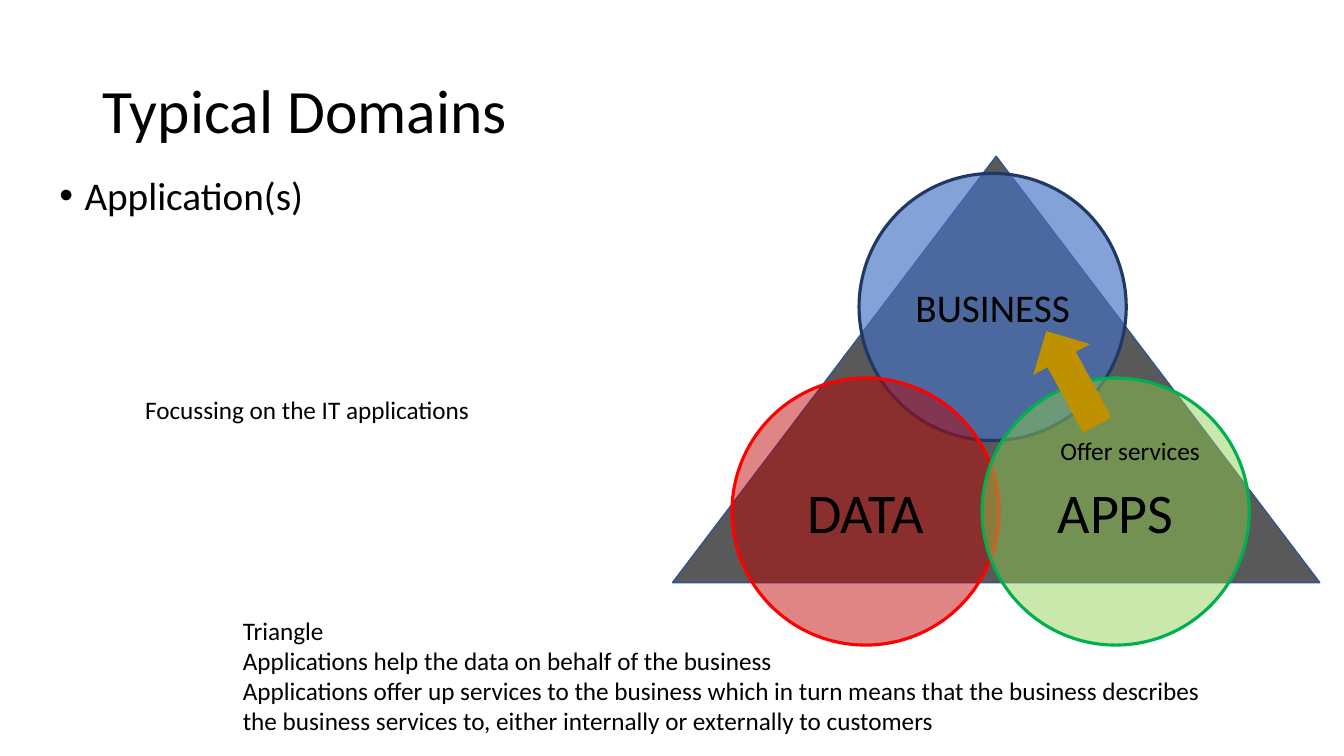
from lxml import etree
from pptx import Presentation
from pptx.dml.color import RGBColor
from pptx.enum.shapes import MSO_SHAPE
from pptx.enum.text import MSO_ANCHOR, PP_ALIGN
from pptx.oxml.ns import qn
from pptx.util import Inches, Pt

TRIANGLE, ELLIPSE, ARROW = MSO_SHAPE.ISOSCELES_TRIANGLE, MSO_SHAPE.OVAL, MSO_SHAPE.RIGHT_ARROW
TOP, MIDDLE = MSO_ANCHOR.TOP, MSO_ANCHOR.MIDDLE
LEFT, CENTER = PP_ALIGN.LEFT, PP_ALIGN.CENTER

BLACK = RGBColor(0x00, 0x00, 0x00)
GREY = RGBColor(0x59, 0x59, 0x59)
EDGE_BLUE = RGBColor(0x32, 0x54, 0x91)
BLUE = RGBColor(0x44, 0x72, 0xC4)
NAVY = RGBColor(0x20, 0x38, 0x64)
DARK_RED = RGBColor(0xC0, 0x00, 0x00)
RED = RGBColor(0xFF, 0x00, 0x00)
LIME = RGBColor(0x92, 0xD0, 0x50)
GREEN = RGBColor(0x00, 0xB0, 0x50)
GOLD = RGBColor(0xBF, 0x90, 0x00)

FONT = "Calibri"
DIAMETER = 2.65
DOMAINS = [
    ("BUSINESS", 28, 1.85, 0.17, BLUE, NAVY, 66),
    ("DATA", 40, 0.59, 2.2, DARK_RED, RED, 48),
    ("APPS", 40, 3.07, 2.2, LIME, GREEN, 48),
]
EXPLANATION = [
    "Triangle",
    "Applications help the data on behalf of the business",
    "Applications offer up services to the business which in turn means that "
    "the business describes the business services to, either internally or "
    "externally to customers",
]


def write(frame, lines, size, align=LEFT, anchor=TOP, wrap=True, spacing=1.0):
    """Fill a text frame with one paragraph per line."""
    frame.word_wrap = wrap
    frame.vertical_anchor = anchor
    for index, line in enumerate(lines):
        paragraph = frame.paragraphs[0] if index == 0 else frame.add_paragraph()
        paragraph.alignment = align
        paragraph.line_spacing = spacing
        run = paragraph.add_run()
        run.text = line
        for name, value in {"name": FONT, "size": Pt(size)}.items():
            setattr(run.font, name, value)
        run.font.color.rgb = BLACK


def add_text(slide, box, lines, size, **style):
    """Place a text box and return its text frame."""
    frame = slide.shapes.add_textbox(*map(Inches, box)).text_frame
    write(frame, lines, size, **style)
    return frame


def add_figure(slide, preset, box, fill, edge=None, weight=1, opacity=100):
    """Place a flat preset shape with an optional outline."""
    figure = slide.shapes.add_shape(preset, *map(Inches, box))
    figure.shadow.inherit = False
    figure.fill.solid()
    figure.fill.fore_color.rgb = fill
    if opacity < 100:
        color = figure.fill._xPr.find(qn("a:solidFill"))[0]
        etree.SubElement(color, qn("a:alpha")).set("val", str(opacity * 1000))
    if edge is None:
        figure.line.fill.background()
    else:
        figure.line.color.rgb = edge
        figure.line.width = Pt(weight)
    return figure


def add_heading(slide, left, top):
    """Place the title and the bulleted domain under it."""
    add_text(slide, (left + 0.43, top, 11.5, 1.45), ["Typical Domains"], 44,
             anchor=MIDDLE, spacing=0.9)
    domain = add_text(slide, (left, top + 1.3, 4.84, 0.72), ["Application(s)"], 28,
                      spacing=0.9)
    domain.paragraphs[0].space_before = Pt(10)
    properties = domain.paragraphs[0]._p.get_or_add_pPr()
    indent = Inches(0.25)
    properties.set("marL", str(indent))
    properties.set("indent", str(-indent))
    etree.SubElement(properties, qn("a:buFont")).set("typeface", "Arial")
    etree.SubElement(properties, qn("a:buChar")).set("char", "•")


def add_domain_triangle(slide, left, top):
    """Place the triangle, its three domain circles and the service arrow."""
    add_figure(slide, TRIANGLE, (left, top, 6.42, 4.23), GREY, EDGE_BLUE)
    for label, size, dx, dy, fill, edge, opacity in DOMAINS:
        circle = add_figure(slide, ELLIPSE, (left + dx, top + dy, DIAMETER, DIAMETER),
                            fill, edge, 2.25, opacity)
        write(circle.text_frame, [label], size, align=CENTER, anchor=MIDDLE)
    add_text(slide, (left + 3.75, top + 2.72, 1.6, 0.4), ["Offer services"], 18, wrap=False)
    service_arrow = add_figure(slide, ARROW, (left + 3.43, top + 1.88, 1.06, 0.64), GOLD)
    service_arrow.rotation = 241.5


def add_notes_on_domain(slide):
    """Place the focus line and the explanation of the triangle."""
    add_text(slide, (1.34, 3.86, 3.45, 0.4), ["Focussing on the IT applications"], 18,
             wrap=False)
    add_text(slide, (2.31, 6.05, 9.71, 1.92), EXPLANATION, 18)


def main():
    """Build the slide and save it."""
    deck = Presentation()
    deck.slide_width, deck.slide_height = Inches(13.33), Inches(7.5)
    slide = deck.slides.add_slide(deck.slide_layouts[6])
    add_domain_triangle(slide, 6.67, 1.55)
    add_heading(slide, 0.49, 0.4)
    add_notes_on_domain(slide)
    deck.save("out.pptx")


if __name__ == "__main__":
    main()
